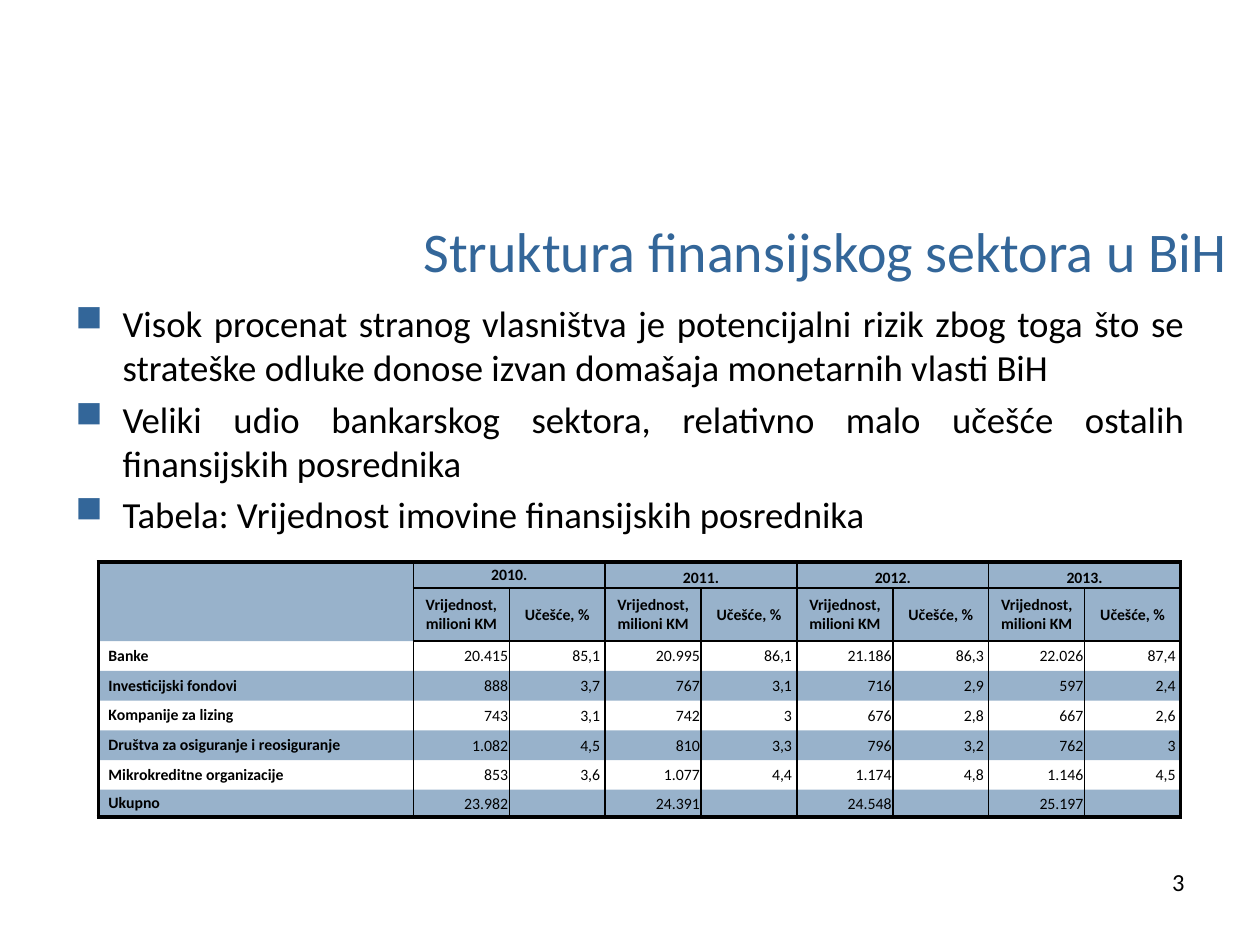
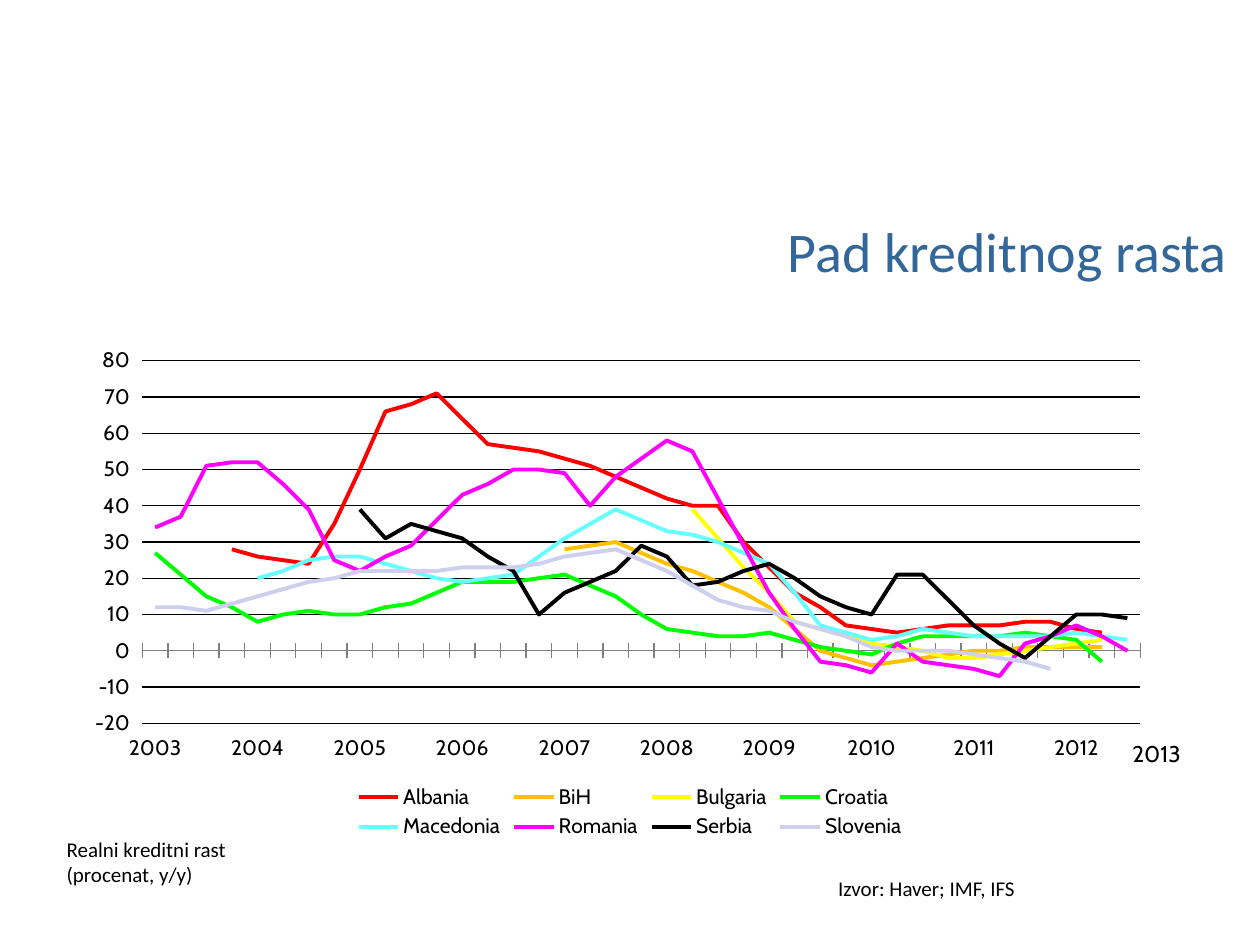
"""Build two slides on the financial sector of BiH: an asset table and a credit growth chart."""
from dataclasses import dataclass

from lxml.etree import SubElement, fromstring
from pptx import Presentation
from pptx.chart.data import CategoryChartData
from pptx.dml.color import RGBColor
from pptx.enum.chart import XL_CHART_TYPE, XL_LEGEND_POSITION, XL_TICK_LABEL_POSITION, XL_TICK_MARK
from pptx.enum.text import MSO_ANCHOR, PP_ALIGN
from pptx.oxml.ns import nsdecls, qn
from pptx.util import Pt


@dataclass(frozen=True)
class Theme:
    accent: str = "336699"
    ink: str = "000000"
    axis: str = "808080"
    text_font: str = "Calibri"
    chart_font: str = "Cabin"
    title_size: int = 32
    body_size: int = 21
    number_size: int = 14
    year_size: int = 13
    note_size: int = 12
    table_size: int = 9
    thick: float = 2.25
    thin: float = 1
    grid: float = 0.75


THEME = Theme()
TITLE_AREA = (60.5, 117.4, 648, 51)
BODY_AREA = (36, 168.5, 648, 314)

SECTOR_TITLE = "Struktura finansijskog sektora u BiH"
SECTOR_POINTS = [
    "Visok procenat stranog vlasništva je potencijalni rizik zbog toga što se strateške odluke "
    "donose izvan domašaja monetarnih vlasti BiH",
    "Veliki udio bankarskog sektora, relativno malo učešće ostalih finansijskih posrednika",
    "Tabela: Vrijednost imovine finansijskih posrednika",
]
YEARS = ["2010.", "2011.", "2012.", "2013."]
MEASURES = ["Vrijednost, milioni KM", "Učešće, %"]
INTERMEDIARIES = [
    ("Banke", "20.415", "85,1", "20.995", "86,1", "21.186", "86,3", "22.026", "87,4"),
    ("Investicijski fondovi", "888", "3,7", "767", "3,1", "716", "2,9", "597", "2,4"),
    ("Kompanije za lizing", "743", "3,1", "742", "3", "676", "2,8", "667", "2,6"),
    ("Društva za osiguranje i reosiguranje", "1.082", "4,5", "810", "3,3", "796", "3,2", "762", "3"),
    ("Mikrokreditne organizacije", "853", "3,6", "1.077", "4,4", "1.174", "4,8", "1.146", "4,5"),
    ("Ukupno", "23.982", "", "24.391", "", "24.548", "", "25.197", ""),
]
ROW_HEIGHTS = [15, 30.3] + [17] * 5 + [15.5]
COLUMN_WIDTHS = [180] + [54.8] * 8

GROWTH_TITLE = "Pad kreditnog rasta"
GROWTH_NOTE = ["Realni kreditni rast", "(procenat, y/y)"]
GROWTH_SOURCE = "Izvor: Haver; IMF, IFS"
LAST_YEAR = "2013"
FIRST_YEAR, QUARTERS = 2003, 39
GROWTH = [
    {"country": "Albania", "color": "FF0000", "start": 3, "turns": {3: 24, 19: 40},
     "half_years": [28, 25, 35, 66, 71, 57, 55, 51, 45, 40, 30, 16, 7, 5, 7, 7, 8, 5]},
    {"country": "BiH", "color": "FFC000", "start": 16, "turns": {21: 1},
     "half_years": [28, 30, 24, 19, 12, 0, -4, -2, 0, 1, 1]},
    {"country": "Bulgaria", "color": "FFFF00", "start": 21, "turns": {},
     "half_years": [39, 23, 8, 4, 1, -2, -1, 1, 3]},
    {"country": "Croatia", "color": "00FF00", "start": 0, "turns": {37: -3},
     "half_years": [27, 15, 8, 11, 10, 13, 19, 19, 21, 15, 6, 4, 5, 1, -1, 4, 4, 5, 3]},
    {"country": "Macedonia", "color": "66FFFF", "start": 4, "turns": {},
     "half_years": [20, 25, 26, 22, 19, 21, 31, 39, 33, 30, 24, 7, 3, 6, 4, 4, 5, 3]},
    {"country": "Romania", "color": "FF00FF", "start": 0,
     "turns": {1: 37, 7: 25, 17: 40, 21: 55, 29: 2, 33: -7},
     "half_years": [34, 51, 52, 39, 22, 29, 43, 50, 49, 48, 58, 42, 16, -3, -6, -3, -5, 2, 7, 0]},
    {"country": "Serbia", "color": "000000", "start": 8,
     "turns": {1: 31, 7: 10, 11: 29, 13: 18, 21: 21},
     "half_years": [39, 35, 31, 22, 16, 22, 26, 19, 24, 15, 10, 21, 7, -2, 10, 9]},
    {"country": "Slovenia", "color": "CECEEF", "start": 0, "turns": {35: -5},
     "half_years": [12, 11, 15, 19, 22, 22, 23, 23, 26, 28, 22, 14, 11, 6, 1, 0, -1, -3]},
]


def quarterly(growth):
    known = {2 * index: value for index, value in enumerate(growth["half_years"])}
    between = {quarter + 1: round((value + known[quarter + 2]) / 2)
               for quarter, value in known.items() if quarter + 2 in known}
    values = {**known, **between, **growth["turns"]}
    return [values.get(quarter - growth["start"]) for quarter in range(QUARTERS)]


def apply(target, formats):
    for name, value in formats.items():
        setattr(target, name, value)


def style_font(font, size, color=THEME.ink, face=THEME.text_font, bold=False):
    apply(font, {"size": Pt(size), "name": face, "bold": bold})
    font.color.rgb = RGBColor.from_string(color)


def style_line(line, color, width):
    line.color.rgb = RGBColor.from_string(color)
    line.width = Pt(width)


def add_text(slide, area, lines, size, align=PP_ALIGN.LEFT, anchor=MSO_ANCHOR.TOP, wrap=True, **font):
    frame = slide.shapes.add_textbox(*map(Pt, area)).text_frame
    apply(frame, {"word_wrap": wrap, "vertical_anchor": anchor})
    for index, line in enumerate(lines):
        paragraph = frame.add_paragraph() if index else frame.paragraphs[0]
        paragraph.alignment = align
        run = paragraph.add_run()
        run.text = line
        style_font(run.font, size, **font)
    return frame


def add_titled_slide(deck, title):
    slide = deck.slides.add_slide(deck.slide_layouts[6])
    add_text(slide, TITLE_AREA, [title], THEME.title_size, PP_ALIGN.RIGHT, MSO_ANCHOR.MIDDLE,
             color=THEME.accent)
    return slide


def add_bullets(slide):
    frame = add_text(slide, BODY_AREA, SECTOR_POINTS, THEME.body_size, PP_ALIGN.JUSTIFY)
    for index, paragraph in enumerate(frame.paragraphs):
        if index:
            paragraph.space_before = Pt(4)
        properties = paragraph._p.get_or_add_pPr()
        properties.set("marL", str(Pt(27)))
        properties.set("indent", str(-Pt(27)))
        SubElement(SubElement(properties, qn("a:buClr")), qn("a:srgbClr"), val=THEME.accent)
        SubElement(properties, qn("a:buChar"), char="■")


def set_borders(cell, widths):
    properties = cell._tc.get_or_add_tcPr()
    for side, width in widths.items():
        border = SubElement(properties, qn(f"a:ln{side}"), w=str(Pt(width)))
        if width:
            SubElement(SubElement(border, qn("a:solidFill")), qn("a:srgbClr"), val=THEME.ink)
        else:
            SubElement(border, qn("a:noFill"))


def set_fill(cell, shaded):
    if not shaded:
        cell.fill.background()
        return
    cell.fill.solid()
    cell.fill.fore_color.rgb = RGBColor.from_string(THEME.accent)
    color = cell._tc.tcPr.find(qn("a:solidFill"))[0]
    SubElement(color, qn("a:alpha"), val="50000")


def cell_format(row, column):
    tight, medium, wide = 0.72, 2.88, 5.76
    align, anchor, side = PP_ALIGN.CENTER, MSO_ANCHOR.MIDDLE, wide
    if row == 0 and column > 1:
        anchor, side = MSO_ANCHOR.BOTTOM, tight
    elif row > 1 and column == 0:
        align = PP_ALIGN.LEFT
    elif row > 1:
        align, side = PP_ALIGN.RIGHT, tight if column % 2 else medium
    return align, {"vertical_anchor": anchor, "margin_left": Pt(side), "margin_right": Pt(side),
                   "margin_top": Pt(0 if side == wide else tight), "margin_bottom": Pt(0)}


def add_assets_table(slide):
    year_row = [""] + [text for year in YEARS for text in (year, "")]
    rows = [year_row, [""] + MEASURES * len(YEARS), *INTERMEDIARIES]
    last_row, last_column = len(rows) - 1, len(COLUMN_WIDTHS) - 1
    area = (56.2, 321.1, sum(COLUMN_WIDTHS), sum(ROW_HEIGHTS))
    table = slide.shapes.add_table(len(rows), len(COLUMN_WIDTHS), *map(Pt, area)).table
    apply(table, {"first_row": False, "horz_banding": False})
    for column, width in zip(table.columns, COLUMN_WIDTHS):
        column.width = Pt(width)
    for row, height in zip(table.rows, ROW_HEIGHTS):
        row.height = Pt(height)
    table.cell(0, 0).merge(table.cell(1, 0))
    for column in range(1, last_column, 2):
        table.cell(0, column).merge(table.cell(0, column + 1))
    for r, texts in enumerate(rows):
        for c, text in enumerate(texts):
            cell = table.cell(r, c)
            align, formats = cell_format(r, c)
            apply(cell, formats)
            paragraph = cell.text_frame.paragraphs[0]
            paragraph.alignment = align
            if text:
                run = paragraph.add_run()
                run.text = text
                style_font(run.font, THEME.table_size, bold=r < 2 or c == 0)
            else:
                SubElement(paragraph._p, qn("a:endParaRPr"), sz=str(THEME.table_size * 100))
            set_borders(cell, {
                "L": THEME.thin if c else THEME.thick,
                "R": THEME.thick if c == last_column or (r == 0 and c == last_column - 1) else THEME.thin,
                "T": THEME.thick if r == 0 else THEME.thin if c and r < 3 else 0,
                "B": THEME.thick if r == last_row else THEME.thin if c and r < 2 else 0,
            })
            set_fill(cell, r < 2 or r % 2)


def manual_layout(x, y, w, h, target=""):
    modes = "".join(f'<c:{axis}Mode val="edge"/>' for axis in "xy")
    sizes = "".join(f'<c:{name} val="{value}"/>' for name, value in zip("xywh", (x, y, w, h)))
    return fromstring(f'<c:layout {nsdecls("c")}><c:manualLayout>{target}{modes}{sizes}'
                      "</c:manualLayout></c:layout>")


def add_growth_chart(slide):
    data = CategoryChartData()
    data.categories = ["" if quarter % 4 or quarter + 4 < 0 else str(FIRST_YEAR + quarter // 4)
                       for quarter in range(QUARTERS)]
    for growth in GROWTH:
        data.add_series(growth["country"], quarterly(growth))
    chart = slide.shapes.add_chart(XL_CHART_TYPE.LINE, *map(Pt, BODY_AREA), data).chart
    apply(chart, {"has_title": False, "has_legend": True})
    style_font(chart.font, THEME.note_size, face=THEME.chart_font)
    apply(chart.legend, {"position": XL_LEGEND_POSITION.BOTTOM, "include_in_layout": False})
    chart.legend._element.insert(1, manual_layout(0.23, 0.88, 0.55, 0.12))

    plot = chart.plots[0]
    plot.vary_by_categories = False
    for series, growth in zip(plot.series, GROWTH):
        series.smooth = False
        style_line(series.format.line, growth["color"], THEME.thick)

    apply(chart.category_axis, {"tick_label_position": XL_TICK_LABEL_POSITION.LOW,
                                "major_tick_mark": XL_TICK_MARK.CROSS})
    style_line(chart.category_axis.format.line, THEME.axis, THEME.grid)
    apply(chart.value_axis, {"minimum_scale": -20, "maximum_scale": 80, "major_unit": 10,
                             "major_tick_mark": XL_TICK_MARK.CROSS, "has_major_gridlines": True})
    chart.value_axis.format.line.fill.background()
    style_line(chart.value_axis.major_gridlines.format.line, THEME.ink, THEME.grid)

    plot_area = chart._chartSpace.chart.plotArea
    for layout in plot_area.findall(qn("c:layout")):
        plot_area.remove(layout)
    plot_area.insert(0, manual_layout(0.07, 0.12, 0.88, 0.66, '<c:layoutTarget val="inner"/>'))


def main():
    deck = Presentation()
    apply(deck, {"slide_width": Pt(720), "slide_height": Pt(540)})

    sector = add_titled_slide(deck, SECTOR_TITLE)
    add_bullets(sector)
    add_text(sector, (516, 492, 168, 37.5), ["3"], THEME.number_size, PP_ALIGN.RIGHT)
    add_assets_table(sector)

    growth = add_titled_slide(deck, GROWTH_TITLE)
    add_text(growth, (108, 497, 479, 21.8), [GROWTH_SOURCE], THEME.note_size, PP_ALIGN.RIGHT)
    add_text(growth, (31, 474.5, 642, 36.5), GROWTH_NOTE, THEME.note_size)
    add_growth_chart(growth)
    add_text(growth, (640, 419, 43.2, 23), [LAST_YEAR], THEME.year_size, wrap=False,
             face=THEME.chart_font)
    deck.save("out.pptx")


if __name__ == "__main__":
    main()
